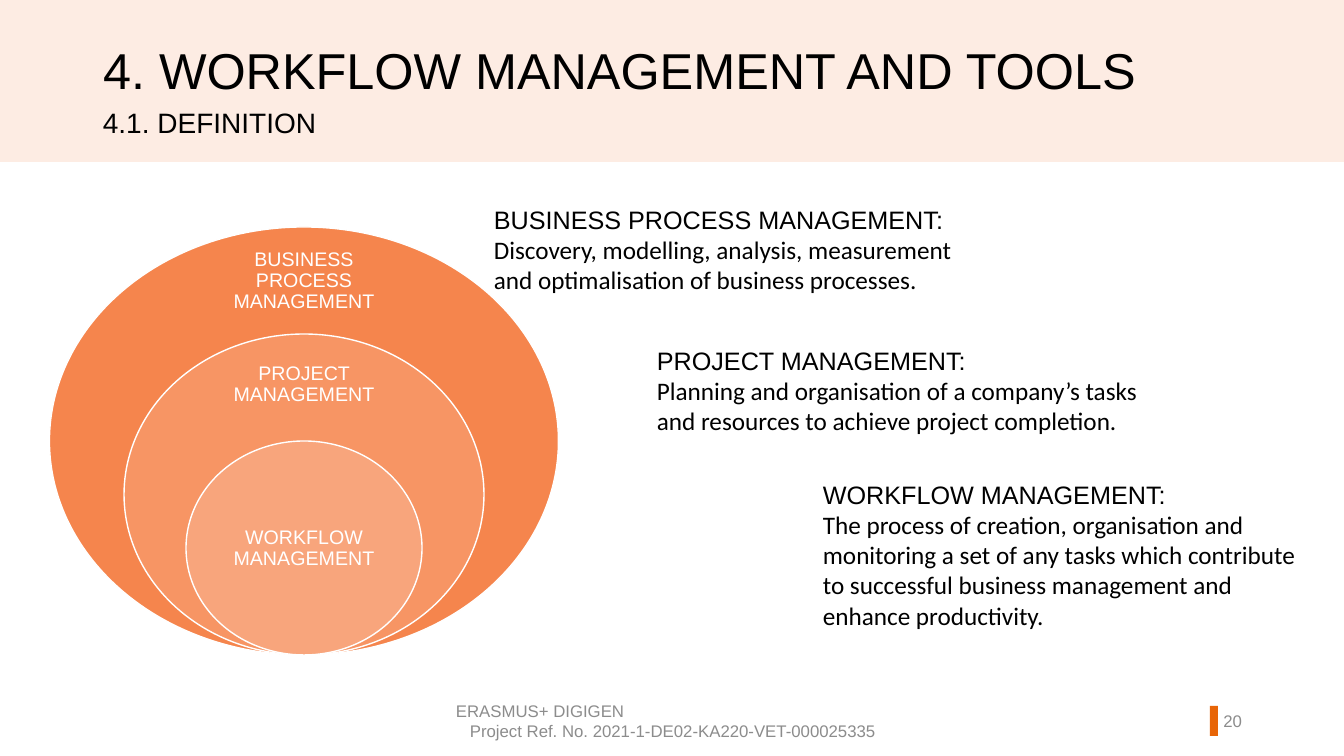
from pptx import Presentation
from pptx.dml.color import RGBColor
from pptx.enum.shapes import MSO_SHAPE
from pptx.enum.text import MSO_ANCHOR, MSO_AUTO_SIZE, PP_ALIGN
from pptx.util import Pt

RECT, OVAL = MSO_SHAPE.RECTANGLE, MSO_SHAPE.OVAL
TOP, MIDDLE = MSO_ANCHOR.TOP, MSO_ANCHOR.MIDDLE
LEFT, CENTER, RIGHT = PP_ALIGN.LEFT, PP_ALIGN.CENTER, PP_ALIGN.RIGHT
FIXED = MSO_AUTO_SIZE.NONE

BLACK = RGBColor(0x00, 0x00, 0x00)
WHITE = RGBColor(0xFF, 0xFF, 0xFF)
GRAY = RGBColor(0x8C, 0x8C, 0x8C)
PEACH = RGBColor(0xFD, 0xEC, 0xE3)
ORANGE = RGBColor(0xE8, 0x65, 0x07)

SCALE = 914400 / 100.8
HEAD, BODY = "Arial", "Calibri"

# Nested circles: label, width, fill, label top, label height
MID, BASE, STEP = 304, 655, 107
LABEL_W = 178
RINGS = [
    ("BUSINESS PROCESS MANAGEMENT", 509, RGBColor(0xF5, 0x85, 0x4D), 249, 64),
    ("PROJECT MANAGEMENT", 360, RGBColor(0xF7, 0x95, 0x64), 355, 60),
    ("WORKFLOW MANAGEMENT", 236, RGBColor(0xF8, 0xA5, 0x7C), 495, 107),
]

# Definitions: left, top, height, heading, text
NOTES = [
    (484, 199, 102, "BUSINESS PROCESS MANAGEMENT:",
     "Discovery, modelling, analysis, measurement and optimalisation "
     "of business processes."),
    (647, 340, 102, "PROJECT MANAGEMENT:",
     "Planning and organisation of a company’s tasks and resources "
     "to achieve project completion."),
    (813, 474, 163, "WORKFLOW MANAGEMENT:",
     "The process of creation, organisation and monitoring a set of any "
     "tasks which contribute to successful business management and "
     "enhance productivity."),
]


def px(n):
    return round(n * SCALE)


def add_form(slide, kind, x, y, w, h, fill, line=None):
    form = slide.shapes.add_shape(kind, px(x), px(y), px(w), px(h))
    form.shadow.inherit = False
    form.fill.solid()
    form.fill.fore_color.rgb = fill
    if line is None:
        form.line.fill.background()
    else:
        form.line.color.rgb = line
        form.line.width = Pt(1)
    return form


def fill_text(frame, rows, size, color, anchor=TOP, space=None):
    """Each row is (text, font, alignment)."""
    frame.word_wrap = True
    frame.auto_size = FIXED
    frame.vertical_anchor = anchor
    for i, (text, font, align) in enumerate(rows):
        para = frame.add_paragraph() if i else frame.paragraphs[0]
        para.alignment = align
        if space:
            para.line_spacing = space
        run = para.add_run()
        run.text = text
        run.font.name = font
        run.font.size = Pt(size)
        run.font.color.rgb = color


def add_text(slide, x, y, w, h, rows, size, color, **style):
    box = slide.shapes.add_textbox(px(x), px(y), px(w), px(h))
    fill_text(box.text_frame, rows, size, color, **style)
    return box


def add_head(slide):
    band = add_form(slide, RECT, 0, 0, 1344, 162, PEACH)
    slide.shapes._spTree.insert(2, band._element)  # behind the title
    title = slide.shapes.title
    title.left, title.top, title.width, title.height = map(px, (93, 41, 1094, 86))
    fill_text(title.text_frame, [("4. WORKFLOW MANAGEMENT AND TOOLS", HEAD, LEFT)],
              36, BLACK, space=0.9)
    add_text(slide, 93, 104, 1094, 86, [("4.1. DEFINITION", HEAD, LEFT)],
             20, BLACK, space=0.9)


def add_rings(slide):
    for i, (name, wide, fill, top, high) in enumerate(RINGS):
        tall = STEP * (4 - i)
        add_form(slide, OVAL, MID - wide / 2, BASE - tall, wide, tall, fill, WHITE)
        box = add_text(slide, MID - LABEL_W / 2, top, LABEL_W, high,
                       [(name, HEAD, CENTER)], 14, WHITE, anchor=MIDDLE, space=0.9)
        frame = box.text_frame
        frame.margin_left = frame.margin_right = px(11)
        frame.margin_top = frame.margin_bottom = px(11)


def add_foot(slide):
    add_form(slide, RECT, 1210, 706, 8, 30, ORANGE)
    add_text(slide, 446, 701, 454, 40,
             [("ERASMUS+ DIGIGEN", HEAD, LEFT),
              ("Project Ref. No. 2021-1-DE02-KA220-VET-000025335", HEAD, CENTER)],
             12, GRAY, anchor=MIDDLE)
    add_text(slide, 1186, 701, 66, 40, [("20", HEAD, RIGHT)], 12, GRAY,
             anchor=MIDDLE)


def main():
    deck = Presentation()
    deck.slide_width, deck.slide_height = px(1344), px(756)
    slide = deck.slides.add_slide(deck.slide_layouts[5])
    add_head(slide)
    add_rings(slide)
    for x, y, h, name, text in NOTES:
        add_text(slide, x, y, 504, h, [(name, HEAD, LEFT), (text, BODY, LEFT)],
                 18, BLACK)
    add_foot(slide)
    deck.save("out.pptx")


if __name__ == "__main__":
    main()
